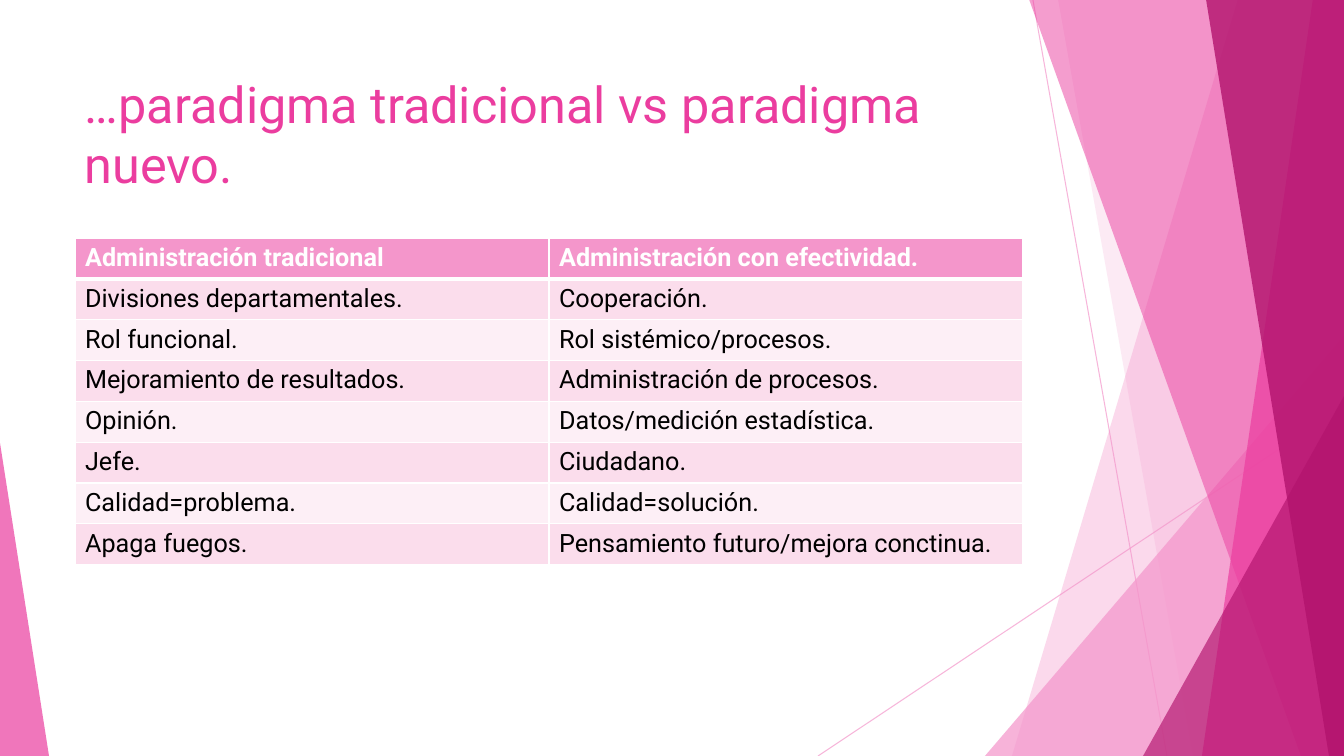
"""Build the slide comparing the traditional and the new management paradigm."""
import pptx
import pptx.dml.color
import pptx.enum.shapes
import pptx.oxml.ns
import pptx.oxml.xmlchemy
import pptx.util

PX = 914400 / 100.8
WIDTH, HEIGHT = 1344, 756
FONT = "Roboto"
COLOURS = {
    "light": "F496CB",
    "pink": "EB3D9F",
    "dark": "B2136D",
    "band": "FBDDEC",
    "pale": "FDEFF6",
    "white": "FFFFFF",
    "black": "000000",
}


def paint(fill, colour, opacity=100):
    fill.solid()
    fill.fore_color.rgb = pptx.dml.color.RGBColor.from_string(COLOURS[colour])
    if opacity < 100:
        tint = fill._xPr.find(".//" + pptx.oxml.ns.qn("a:srgbClr"))
        alpha = pptx.oxml.xmlchemy.OxmlElement("a:alpha")
        alpha.set("val", str(opacity * 1000))
        tint.append(alpha)


def write(frame, text, *, size, colour, bold=False):
    frame.word_wrap = True
    run = frame.paragraphs[0].add_run()
    run.text = text
    run.font.name = FONT
    run.font.size = pptx.util.Pt(size)
    run.font.bold = bold
    run.font.color.rgb = pptx.dml.color.RGBColor.from_string(COLOURS[colour])


presentation = pptx.Presentation()
presentation.slide_width = round(WIDTH * PX)
presentation.slide_height = round(HEIGHT * PX)
slide = presentation.slides.add_slide(presentation.slide_layouts[6])
shapes = slide.shapes

for ends in [(1033, 0, 1167, HEIGHT), (WIDTH, 406, 818, HEIGHT)]:
    ray = shapes.add_connector(
        pptx.enum.shapes.MSO_CONNECTOR.STRAIGHT, *[round(end * PX) for end in ends]
    )
    ray.line.width = pptx.util.Pt(0.75)
    paint(ray.line.fill, "light", 70)
    ray._element.spPr.append(pptx.oxml.xmlchemy.OxmlElement("a:effectLst"))

facets = [
    ("blade", (1238, 1012), "light", 36),
    ("blade", (1058, 1193), "light", 20),
    ("triangle", (985, 336, 359, 420, 1), "light", 72),
    ("blade", (1029, 1301), "pink", 50),
    ("blade", (1313, 1202), "pink", 70),
    ("blade", (1206, 1329), "dark", 80),
    ("triangle", (1143, 396, 201, 360, 1), "dark", 66),
    ("triangle", (0, 443, 49, 313, 0), "pink", 70),
]
for kind, geometry, colour, opacity in facets:
    if kind == "blade":
        top_x, bottom_x = geometry
        outline = shapes.build_freeform(top_x, -1, scale=PX)
        outline.add_line_segments([(WIDTH, -1), (WIDTH, HEIGHT), (bottom_x, HEIGHT)])
        facet = outline.convert_to_shape()
    else:
        *box, apex = geometry
        facet = shapes.add_shape(
            pptx.enum.shapes.MSO_SHAPE.ISOSCELES_TRIANGLE,
            *[round(length * PX) for length in box],
        )
        facet.adjustments[0] = apex
    facet.shadow.inherit = False
    facet.line.fill.background()
    paint(facet.fill, colour, opacity)

title = shapes.add_textbox(*[round(length * PX) for length in (75, 68, 948, 145)])
write(title.text_frame, "…paradigma tradicional vs paradigma nuevo.", size=36, colour="pink")

comparison = [
    ("Administración tradicional", "Administración con efectividad."),
    ("Divisiones departamentales.", "Cooperación."),
    ("Rol funcional.", "Rol sistémico/procesos."),
    ("Mejoramiento de resultados.", "Administración de procesos."),
    ("Opinión.", "Datos/medición estadística."),
    ("Jefe.", "Ciudadano."),
    ("Calidad=problema.", "Calidad=solución."),
    ("Apaga fuegos.", "Pensamiento futuro/mejora conctinua."),
]
table = shapes.add_table(
    len(comparison), 2, *[round(length * PX) for length in (75, 238, 948, 327)]
).table
for row, paradigms in enumerate(comparison):
    header = row == 0
    for column, text in enumerate(paradigms):
        cell = table.cell(row, column)
        write(cell.text_frame, text, size=18, colour="white" if header else "black", bold=header)
        borders = {"a:lnL": 1, "a:lnR": 1, "a:lnT": 3 if row == 1 else 1, "a:lnB": 3 if header else 1}
        for side, points in borders.items():
            border = pptx.oxml.xmlchemy.OxmlElement(side)
            border.set("w", str(pptx.util.Pt(points)))
            border_fill = pptx.oxml.xmlchemy.OxmlElement("a:solidFill")
            border_colour = pptx.oxml.xmlchemy.OxmlElement("a:srgbClr")
            border_colour.set("val", COLOURS["white"])
            border_fill.append(border_colour)
            border.append(border_fill)
            cell._tc.get_or_add_tcPr().append(border)
        paint(cell.fill, "light" if header else "band" if row % 2 else "pale")

presentation.save("out.pptx")
